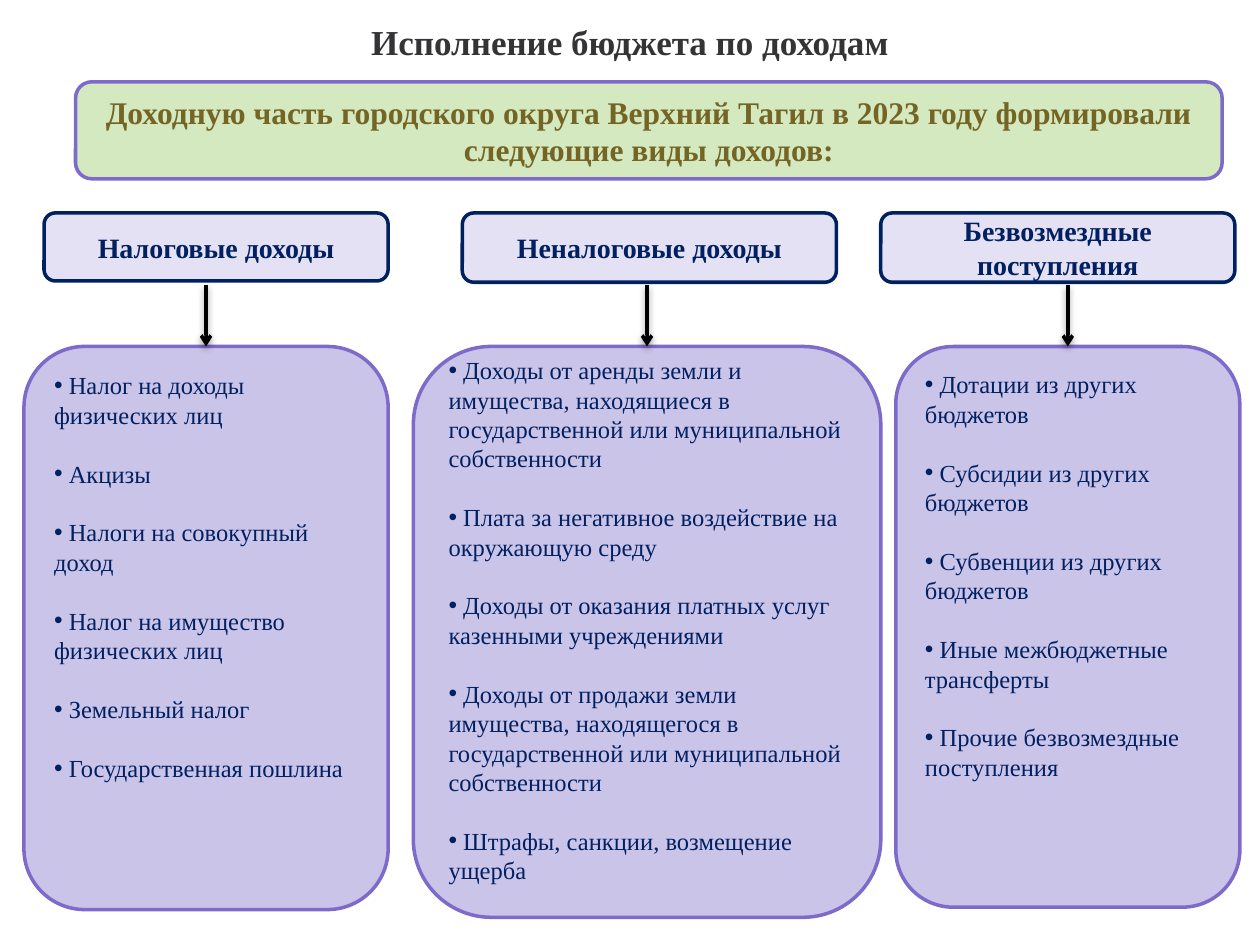
"""Build the slide on budget revenue by type."""
from dataclasses import dataclass

from lxml.etree import SubElement
from pptx import Presentation
from pptx.dml.color import RGBColor
from pptx.enum.shapes import MSO_CONNECTOR, MSO_SHAPE
from pptx.enum.text import MSO_ANCHOR, PP_ALIGN
from pptx.oxml import parse_xml
from pptx.oxml.ns import nsdecls, qn
from pptx.util import Pt


@dataclass(frozen=True)
class Theme:
    font: str = "Times New Roman"
    title: RGBColor = RGBColor.from_string("343436")
    banner_text: RGBColor = RGBColor.from_string("756525")
    banner_fill: RGBColor = RGBColor.from_string("C2E1A5")
    navy: RGBColor = RGBColor.from_string("002060")
    header_fill: RGBColor = RGBColor.from_string("E5E1F4")
    list_fill: RGBColor = RGBColor.from_string("CBC4E9")
    purple: RGBColor = RGBColor.from_string("7E6BC9")
    black: RGBColor = RGBColor.from_string("000000")
    title_size: int = 20
    banner_size: int = 18
    header_size: int = 16
    list_size: int = 14
    line_width: int = 2
    leading: float = 1.2


theme = Theme()


def add_box(left, top, width, height, fill, line):
    shape = slide.shapes.add_shape(
        MSO_SHAPE.ROUNDED_RECTANGLE, Pt(left), Pt(top), Pt(width), Pt(height))
    shape.shadow.inherit = False
    shape.fill.solid()
    shape.fill.fore_color.rgb = fill
    shape.line.color.rgb = line
    shape.line.width = Pt(theme.line_width)
    return shape


def write(shape, texts, size, color, anchor, bulleted=False):
    frame = shape.text_frame
    frame.word_wrap = True
    frame.vertical_anchor = anchor
    for index, text in enumerate(texts):
        paragraph = frame.paragraphs[0] if index == 0 else frame.add_paragraph()
        paragraph.alignment = PP_ALIGN.LEFT if bulleted else PP_ALIGN.CENTER
        paragraph.line_spacing = Pt(size * theme.leading)
        if index:
            paragraph.space_before = Pt(size * theme.leading)
        if bulleted:
            properties = paragraph._p.get_or_add_pPr()
            SubElement(properties, qn("a:buFont"), typeface="Arial")
            SubElement(properties, qn("a:buChar"), char="•")
        run = paragraph.add_run()
        run.text = f" {text}" if bulleted else text
        run.font.name = theme.font
        run.font.size = Pt(size)
        run.font.bold = not bulleted
        run.font.color.rgb = color


presentation = Presentation()
presentation.slide_width = Pt(720)
presentation.slide_height = Pt(540)
slide = presentation.slides.add_slide(presentation.slide_layouts[6])

title = slide.shapes.add_textbox(Pt(0), Pt(0), Pt(720), Pt(46.8))
title.text_frame.margin_top = title.text_frame.margin_bottom = Pt(11.5)
write(title, ["Исполнение бюджета по доходам"],
      theme.title_size, theme.title, MSO_ANCHOR.TOP)

banner = add_box(43.2, 46.8, 655.2, 55.4, theme.banner_fill, theme.purple)
banner_color = banner.fill._xPr.find(qn("a:solidFill"))[0]
SubElement(banner_color, qn("a:alpha"), val="70000")
write(banner,
      ["Доходную часть городского округа Верхний Тагил в 2023 году формировали "
       "следующие виды доходов:"],
      theme.banner_size, theme.banner_text, MSO_ANCHOR.MIDDLE)

columns = [
    ("Налоговые доходы", (25.2, 196.6, 38.9), (13.7, 208.1, 321.8),
     MSO_ANCHOR.TOP, 3.6,
     ["Налог на доходы физических лиц",
      "Акцизы",
      "Налоги на совокупный доход",
      "Налог на имущество физических лиц",
      "Земельный налог",
      "Государственная пошлина"]),
    ("Неналоговые доходы", (264.2, 213.8, 39.6), (236.2, 267.1, 326.2),
     MSO_ANCHOR.MIDDLE, 17.3,
     ["Доходы от аренды земли и имущества, находящиеся в государственной "
      "или муниципальной собственности",
      "Плата за негативное воздействие на окружающую среду",
      "Доходы от оказания платных услуг казенными учреждениями",
      "Доходы от продажи земли имущества, находящегося в государственной "
      "или муниципальной собственности",
      "Штрафы, санкции, возмещение ущерба"]),
    ("Безвозмездные поступления", (503.3, 202.3, 39.6), (511.9, 196.6, 320.4),
     MSO_ANCHOR.TOP, 3.6,
     ["Дотации из других бюджетов",
      "Субсидии из других бюджетов",
      "Субвенции из других бюджетов",
      "Иные межбюджетные трансферты",
      "Прочие безвозмездные поступления"]),
]
header_top, arrow_top, list_top = 121.7, 162.7, 198

for heading, header_place, list_place, anchor, bottom_margin, items in columns:
    left, width, height = header_place
    header = add_box(left, header_top, width, height, theme.header_fill, theme.navy)
    write(header, [heading], theme.header_size, theme.navy, MSO_ANCHOR.MIDDLE)

    left, width, height = list_place
    revenue_list = add_box(left, list_top, width, height, theme.list_fill, theme.purple)
    revenue_list.text_frame.margin_bottom = Pt(bottom_margin)
    write(revenue_list, items, theme.list_size, theme.navy, anchor, bulleted=True)

    center = left + width / 2
    arrow = slide.shapes.add_connector(
        MSO_CONNECTOR.STRAIGHT, Pt(center), Pt(arrow_top), Pt(center), Pt(list_top))
    arrow.end_connect(revenue_list, 0)
    arrow.line.color.rgb = theme.black
    arrow.line.width = Pt(theme.line_width)
    SubElement(arrow.line._get_or_add_ln(), qn("a:tailEnd"), type="arrow")
    arrow._element.spPr.append(parse_xml(
        f'<a:effectLst {nsdecls("a")}>'
        f'<a:outerShdw blurRad="{Pt(4)}" dist="{Pt(2)}" dir="5400000" rotWithShape="0">'
        f'<a:srgbClr val="{theme.black}"><a:alpha val="40000"/></a:srgbClr>'
        '</a:outerShdw></a:effectLst>'))

presentation.save("out.pptx")
